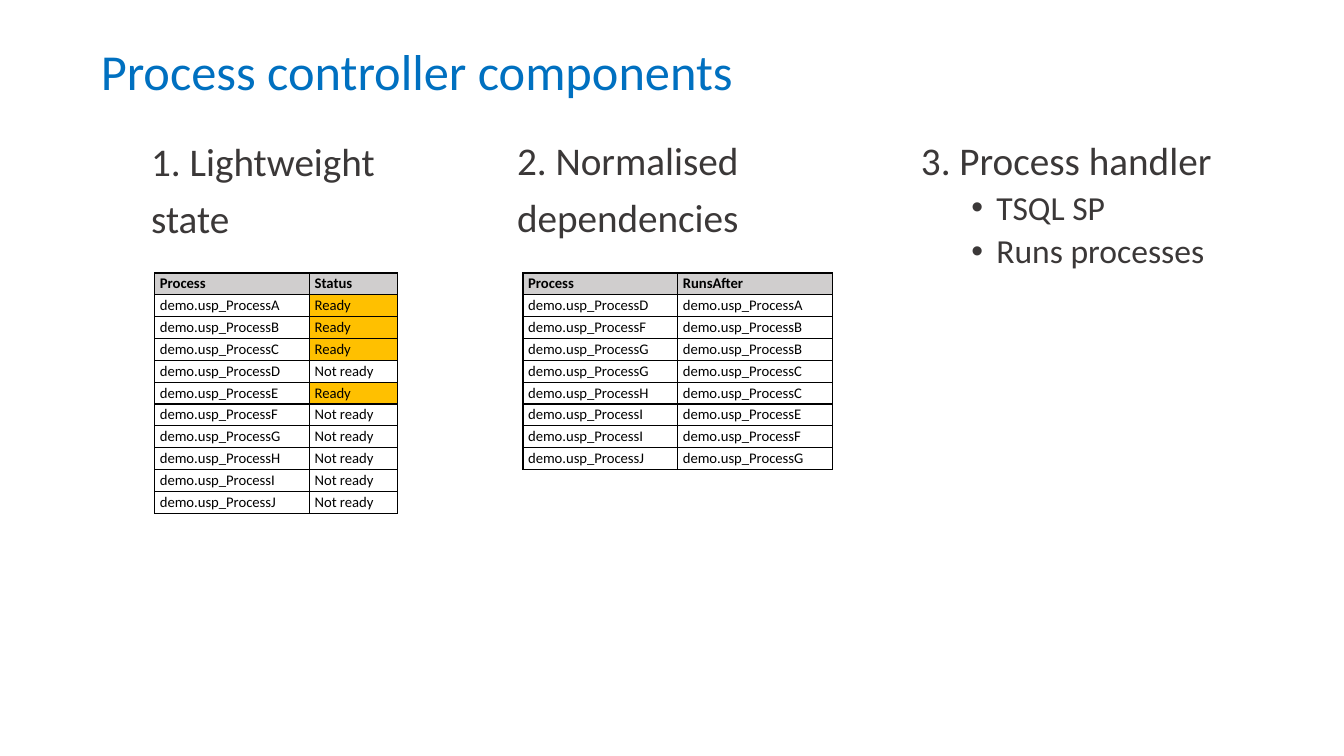
from lxml.etree import SubElement as add_element
from pptx import Presentation
from pptx.dml.color import RGBColor
from pptx.oxml.ns import qn
from pptx.util import Cm, Pt

FONT = "Calibri"
BLUE, DARK, BLACK, WHITE = "0070C0", "3B3838", "000000", "FFFFFF"
GREY, AMBER = "D0CECE", "FFC000"
ROW_HEIGHT = 0.55
TABLE_TOP = 6.88
READY = "ABCE"
DEPENDENCIES = ["DA", "FB", "GB", "GC", "HC", "IE", "IF", "JG"]


def color(value):
    """Turn a hex string into a colour."""
    return RGBColor.from_string(value)


def apply(target, values):
    """Set each named attribute on the target."""
    for name, value in values.items():
        setattr(target, name, value)


def add_span(para, text, size, shade, bold=False):
    """Append a formatted span to a paragraph."""
    span = para.add_run()
    span.text = text
    apply(span.font, {"name": FONT, "size": Pt(size), "bold": bold})
    span.font.color.rgb = color(shade)


def add_bullet(para):
    """Give a paragraph a hanging bullet."""
    props = para._p.get_or_add_pPr()
    props.set("marL", str(Cm(1.9)))
    props.set("indent", str(Cm(-0.63)))
    add_element(props, qn("a:buFont"), typeface="Arial")
    add_element(props, qn("a:buChar"), char="•")


def add_text(page, place, lines, size, shade, bullets=()):
    """Add a text box with plain lines followed by bullets."""
    box = page.shapes.add_textbox(*map(Cm, place))
    frame = box.text_frame
    frame.word_wrap = True
    for index, text in enumerate([*lines, *bullets]):
        para = frame.paragraphs[0] if index == 0 else frame.add_paragraph()
        bulleted = index >= len(lines)
        apply(para, {"line_spacing": 0.9,
                     "space_before": Pt(5 if bulleted else 10),
                     "level": int(bulleted)})
        if bulleted:
            add_bullet(para)
        add_span(para, text, 24 if bulleted else size, shade)


def add_borders(cell):
    """Draw a thin black line on every side of a cell."""
    props = cell._tc.get_or_add_tcPr()
    for position, side in enumerate(("lnL", "lnR", "lnT", "lnB")):
        line = props.makeelement(qn(f"a:{side}"), {"w": str(Pt(1))})
        fill = add_element(line, qn("a:solidFill"))
        add_element(fill, qn("a:srgbClr"), val=BLACK)
        props.insert(position, line)


def fill_cell(cell, text, shade, bold):
    """Write and style one table cell."""
    apply(cell, {"margin_left": Cm(0.13), "margin_right": Cm(0.13),
                 "margin_top": Cm(0.05), "margin_bottom": Cm(0.05)})
    add_span(cell.text_frame.paragraphs[0], text, 10.5, BLACK, bold)
    cell.fill.solid()
    cell.fill.fore_color.rgb = color(shade)
    add_borders(cell)


def add_grid(page, left, widths, rows):
    """Add a bordered table with a grey header row."""
    place = (left, TABLE_TOP, sum(widths), ROW_HEIGHT * len(rows))
    table = page.shapes.add_table(len(rows), len(widths), *map(Cm, place)).table
    for column, width in zip(table.columns, widths):
        column.width = Cm(width)
    for r, texts in enumerate(rows):
        table.rows[r].height = Cm(ROW_HEIGHT)
        for c, text in enumerate(texts):
            shade = GREY if r == 0 else AMBER if text == "Ready" else WHITE
            fill_cell(table.cell(r, c), text, shade, r == 0)


def process(letter):
    """Name the demo process with this letter."""
    return f"demo.usp_Process{letter}"


def main():
    """Build and save the slide."""
    deck = Presentation()
    apply(deck, {"slide_width": Cm(33.87), "slide_height": Cm(19.05)})
    page = deck.slides.add_slide(deck.slide_layouts[6])
    add_text(page, (2.29, 1.05, 26.11, 1.57),
             ["Process controller components"], 36, BLUE)
    add_text(page, (3.56, 3.48, 8.86, 1.35),
             ["1. Lightweight", "state"], 28, DARK)
    add_text(page, (12.78, 3.45, 12.75, 1.35),
             ["2. Normalised", "dependencies"], 28, DARK)
    add_text(page, (22.96, 3.45, 8.86, 1.35), ["3. Process handler"], 28, DARK,
             ["TSQL SP", "Runs processes"])
    states = [(process(letter), "Ready" if letter in READY else "Not ready")
              for letter in "ABCDEFGHIJ"]
    add_grid(page, 3.9, (3.9, 2.21), [("Process", "Status"), *states])
    links = [tuple(map(process, pair)) for pair in DEPENDENCIES]
    add_grid(page, 13.18, (3.9, 3.9), [("Process", "RunsAfter"), *links])
    deck.save("out.pptx")


if __name__ == "__main__":
    main()
